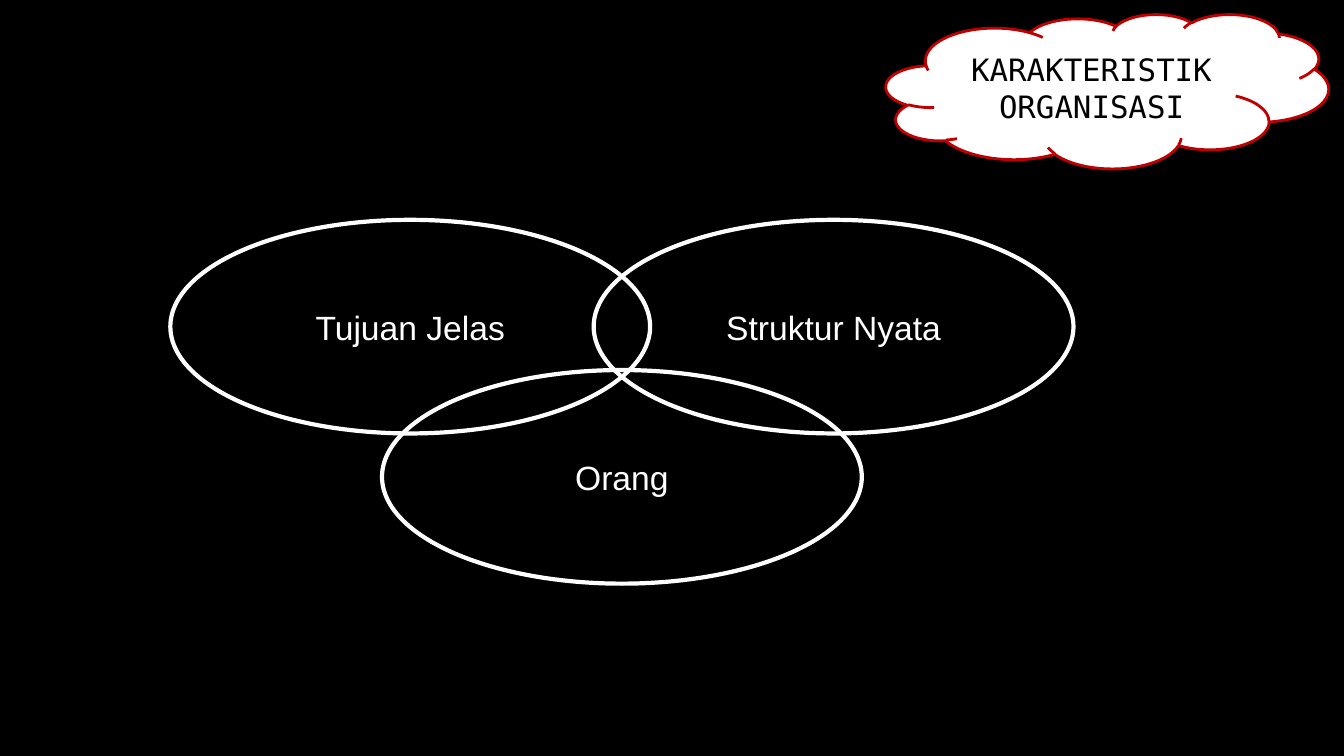
from pptx import Presentation
from pptx.dml.color import RGBColor
from pptx.enum.shapes import MSO_SHAPE
from pptx.enum.text import MSO_ANCHOR, PP_ALIGN
from pptx.util import Pt

# Content: each ring has a column and a row in the cluster
TITLE = "KARAKTERISTIK ORGANISASI"
RINGS = [("Tujuan Jelas", 0, 0), ("Struktur Nyata", 2, 0), ("Orang", 1, 1)]

THEME = {
    "background": "000000",
    "title": {"fill": "FFFFFF", "line": "C00000", "weight": 2,
              "font": {"name": "DejaVu Sans Mono", "size": Pt(22)}, "color": "000000"},
    "ring": {"fill": None, "line": "FFFFFF", "weight": 3,
             "font": {"name": "Arial", "size": Pt(24)}, "color": "FFFFFF"},
}

# Layout in points
SLIDE_W, SLIDE_H = 960, 540
CLOUD = (632.9, 10.1, 316.1, 110.2)
RING_LEFT, RING_TOP, RING_W, RING_H = 121.7, 157, 342.7, 152.6
STEP_X, STEP_Y = 151.2, 107.3


def add_label(s, kind, box, text, style):
    sp = s.shapes.add_shape(kind, *(Pt(v) for v in box))
    sp.shadow.inherit = False
    if style["fill"]:
        sp.fill.solid()
        sp.fill.fore_color.rgb = RGBColor.from_string(style["fill"])
    else:
        sp.fill.background()
    sp.line.color.rgb = RGBColor.from_string(style["line"])
    sp.line.width = Pt(style["weight"])
    tf = sp.text_frame
    tf.word_wrap = True
    tf.vertical_anchor = MSO_ANCHOR.MIDDLE
    p = tf.paragraphs[0]
    p.alignment = PP_ALIGN.CENTER
    r = p.add_run()
    r.text = text
    for name, value in style["font"].items():
        setattr(r.font, name, value)
    r.font.color.rgb = RGBColor.from_string(style["color"])


def main():
    prs = Presentation()
    prs.slide_width, prs.slide_height = Pt(SLIDE_W), Pt(SLIDE_H)
    s = prs.slides.add_slide(prs.slide_layouts[6])
    s.background.fill.solid()
    s.background.fill.fore_color.rgb = RGBColor.from_string(THEME["background"])

    # Title cloud
    add_label(s, MSO_SHAPE.CLOUD, CLOUD, TITLE, THEME["title"])

    # Overlapping rings
    for text, col, row in RINGS:
        box = (RING_LEFT + col * STEP_X, RING_TOP + row * STEP_Y, RING_W, RING_H)
        add_label(s, MSO_SHAPE.OVAL, box, text, THEME["ring"])

    prs.save("out.pptx")


if __name__ == "__main__":
    main()
